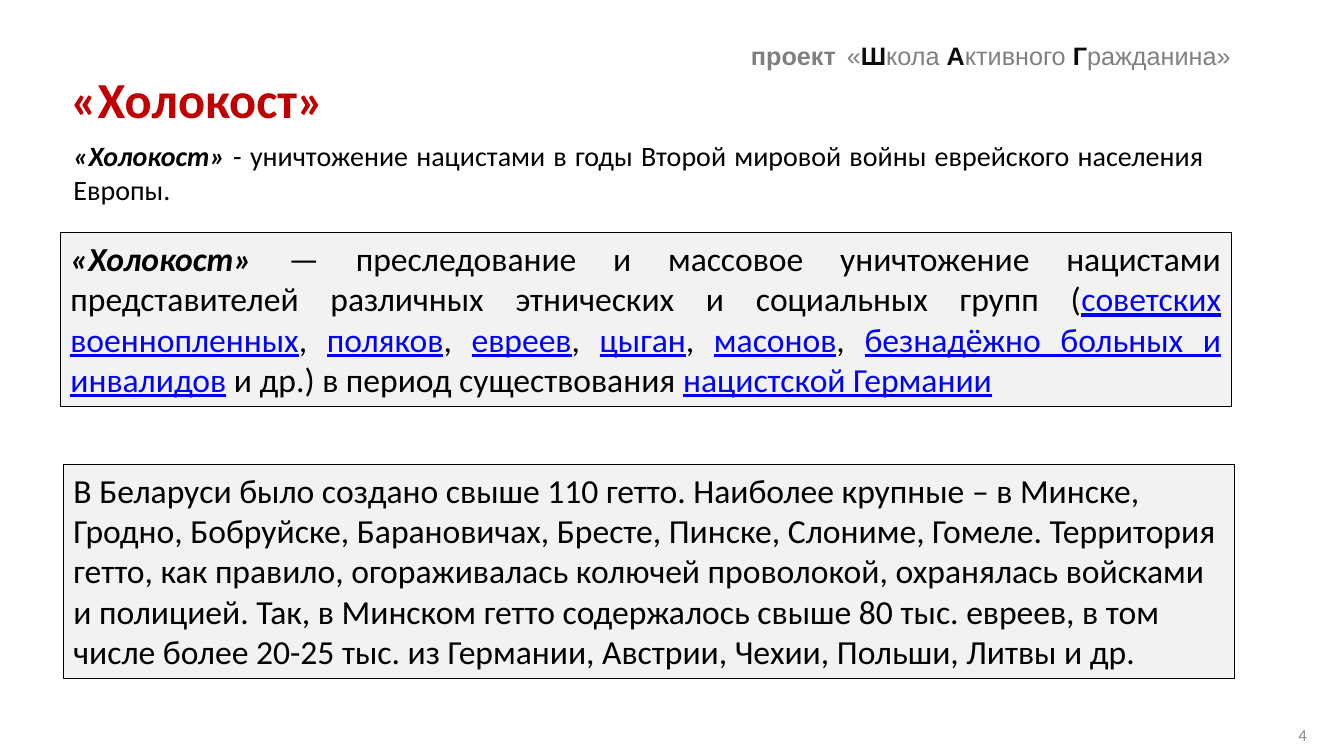
from pptx import Presentation
from pptx.dml.color import RGBColor
from pptx.enum.shapes import MSO_SHAPE
from pptx.enum.text import MSO_ANCHOR, MSO_AUTO_SIZE, PP_ALIGN
from pptx.util import Inches, Pt

BLACK = RGBColor(0x00, 0x00, 0x00)
NEAR_BLACK = RGBColor(0x0D, 0x0D, 0x0D)
GRAY = RGBColor(0x80, 0x80, 0x80)
NUMBER_GRAY = RGBColor(0x8C, 0x8C, 0x8C)
RED = RGBColor(0xC0, 0x00, 0x00)
BLUE = RGBColor(0x00, 0x00, 0xFF)
PANEL = RGBColor(0xF2, 0xF2, 0xF2)

PLAIN = {"color": BLACK}
TERM = {"color": BLACK, "bold": True, "italic": True}
LINK = {"color": BLUE, "underline": True}
PALE = {"color": GRAY}
PALE_BOLD = {"color": GRAY, "bold": True}
INITIAL = {"color": NEAR_BLACK, "bold": True}

HEADER = [
    ("проект", PALE_BOLD),
    (" ", {"color": GRAY, "bold": True, "size": 28}),
    ("«", PALE),
    ("Ш", INITIAL), ("кола ", PALE),
    ("А", INITIAL), ("ктивного ", PALE),
    ("Г", INITIAL), ("ражданина»", PALE),
]
TITLE = [("«Холокост»", {"color": RED, "bold": True})]
PAGE_NUMBER = [("4", {"color": NUMBER_GRAY})]
DEFINITION = [
    ("«Холокост» ", TERM),
    ("- уничтожение нацистами в годы Второй мировой войны еврейского "
     "населения Европы.", PLAIN),
]
VICTIMS = ["советских военнопленных", "поляков", "евреев", "цыган", "масонов",
           "безнадёжно больных и инвалидов"]
PERSECUTION = [
    ("«Холокост» ", TERM),
    ("— преследование и массовое уничтожение нацистами представителей "
     "различных этнических и социальных групп (", PLAIN),
]
for position, group in enumerate(VICTIMS):
    if position:
        PERSECUTION.append((", ", PLAIN))
    PERSECUTION.append((group, LINK))
PERSECUTION += [(" и др.) в период существования ", PLAIN),
                ("нацистской Германии", LINK)]
GHETTOS = [
    ("В Беларуси было создано свыше 110 гетто. Наиболее крупные – в Минске, "
     "Гродно, Бобруйске, Барановичах, Бресте, Пинске, Слониме, Гомеле. "
     "Территория гетто, как правило, огораживалась колючей проволокой, "
     "охранялась войсками и полицией. Так, в Минском гетто содержалось свыше "
     "80 тыс. евреев, в том числе более 20-25 тыс. из Германии, Австрии, "
     "Чехии, Польши, Литвы и др.", PLAIN),
]


def write(shape, runs, size, font="Calibri", align=PP_ALIGN.LEFT,
          anchor=MSO_ANCHOR.TOP, wrap=True):
    frame = shape.text_frame
    frame.word_wrap = wrap
    frame.auto_size = MSO_AUTO_SIZE.NONE
    frame.vertical_anchor = anchor
    paragraph = frame.paragraphs[0]
    paragraph.alignment = align
    for text, style in runs:
        run = paragraph.add_run()
        run.text = text
        run.font.name = font
        run.font.size = Pt(style.get("size", size))
        run.font.color.rgb = style["color"]
        run.font.bold = style.get("bold", False)
        run.font.italic = style.get("italic", False)
        run.font.underline = style.get("underline", False)


def add_text(slide, box, runs, size, **options):
    shape = slide.shapes.add_textbox(*map(Inches, box))
    write(shape, runs, size, **options)


def add_panel(slide, box, runs, align):
    shape = slide.shapes.add_shape(MSO_SHAPE.RECTANGLE, *map(Inches, box))
    shape.shadow.inherit = False
    shape.fill.solid()
    shape.fill.fore_color.rgb = PANEL
    shape.line.color.rgb = BLACK
    shape.line.width = Pt(0.75)
    write(shape, runs, 24, align=align)


def main():
    presentation = Presentation()
    presentation.slide_width = Inches(13.33)
    presentation.slide_height = Inches(7.5)
    slide = presentation.slides.add_slide(presentation.slide_layouts[5])

    title = slide.shapes.title
    title.left, title.top, title.width, title.height = map(
        Inches, (0.6, 0.63, 2.73, 0.71))
    write(title, TITLE, 36, wrap=False)

    add_text(slide, (7.35, 0.21, 5.01, 0.57), HEADER, 18, font="Arial", wrap=False)
    add_text(slide, (10.71, 7.13, 2.35, 0.33), PAGE_NUMBER, 12,
             align=PP_ALIGN.RIGHT, anchor=MSO_ANCHOR.MIDDLE)
    add_text(slide, (0.63, 1.33, 11.41, 0.77), DEFINITION, 20,
             align=PP_ALIGN.JUSTIFY)
    add_panel(slide, (0.6, 2.31, 11.61, 1.72), PERSECUTION, PP_ALIGN.JUSTIFY)
    add_panel(slide, (0.63, 4.61, 11.61, 2.12), GHETTOS, PP_ALIGN.LEFT)

    presentation.save("out.pptx")


if __name__ == "__main__":
    main()
